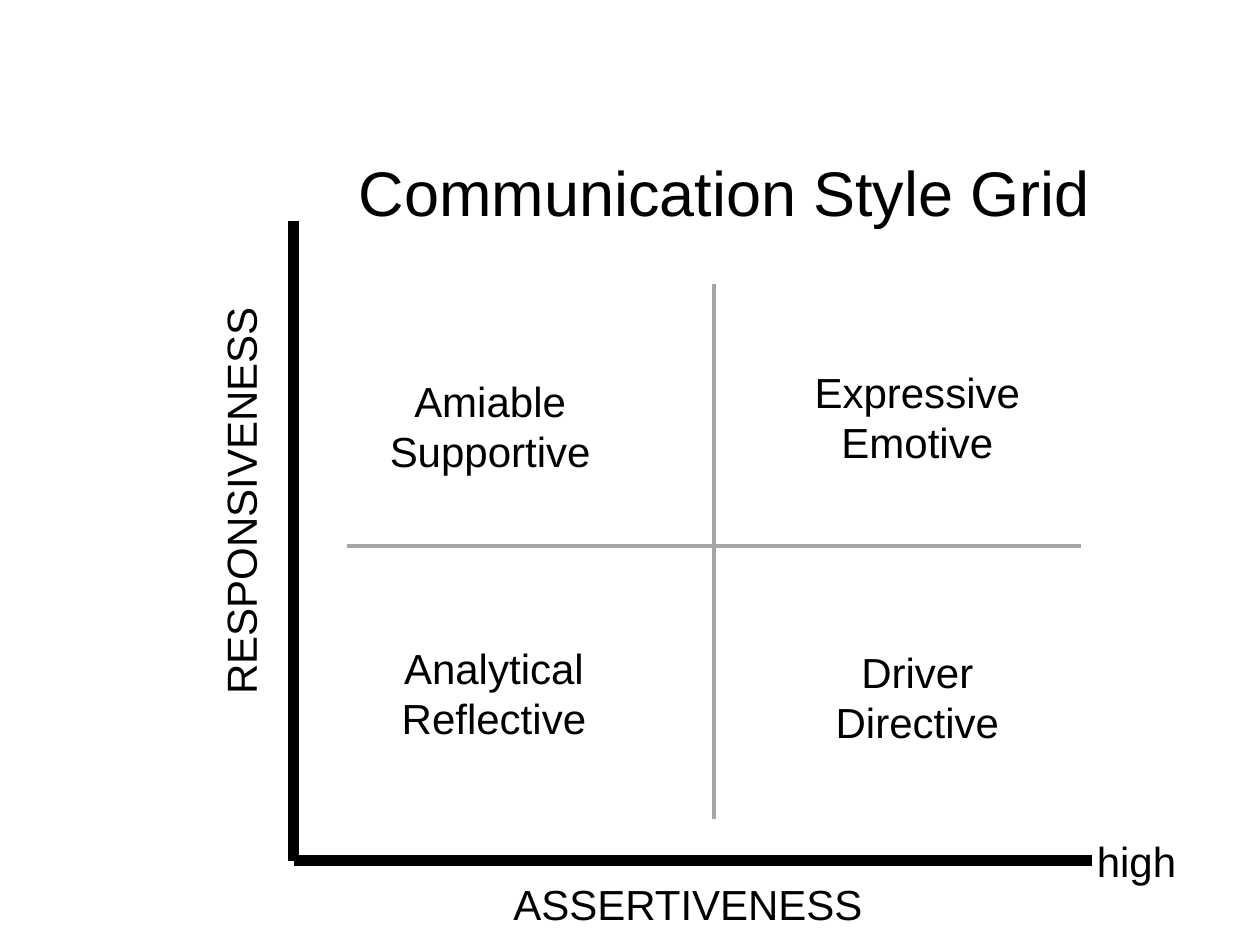
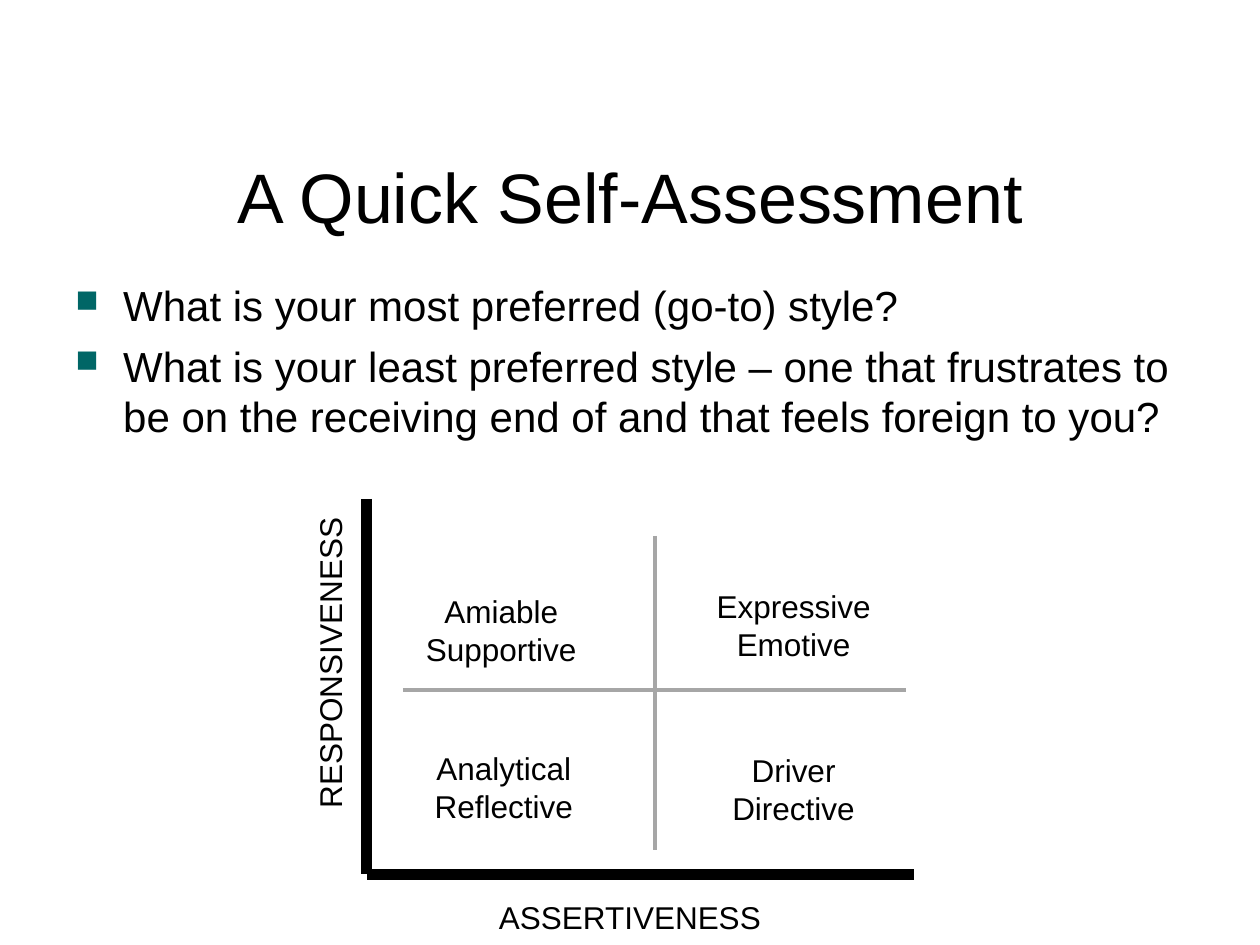
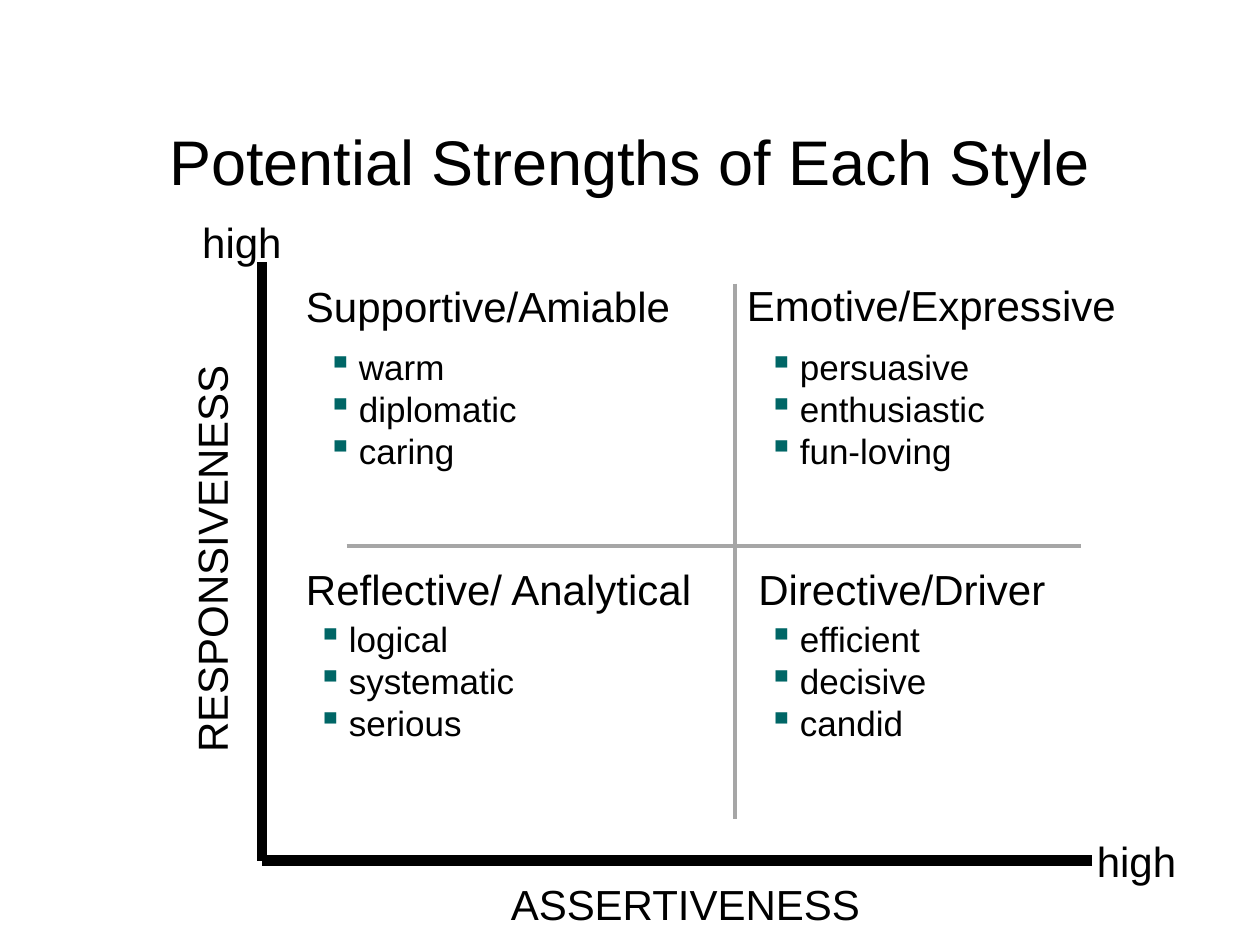
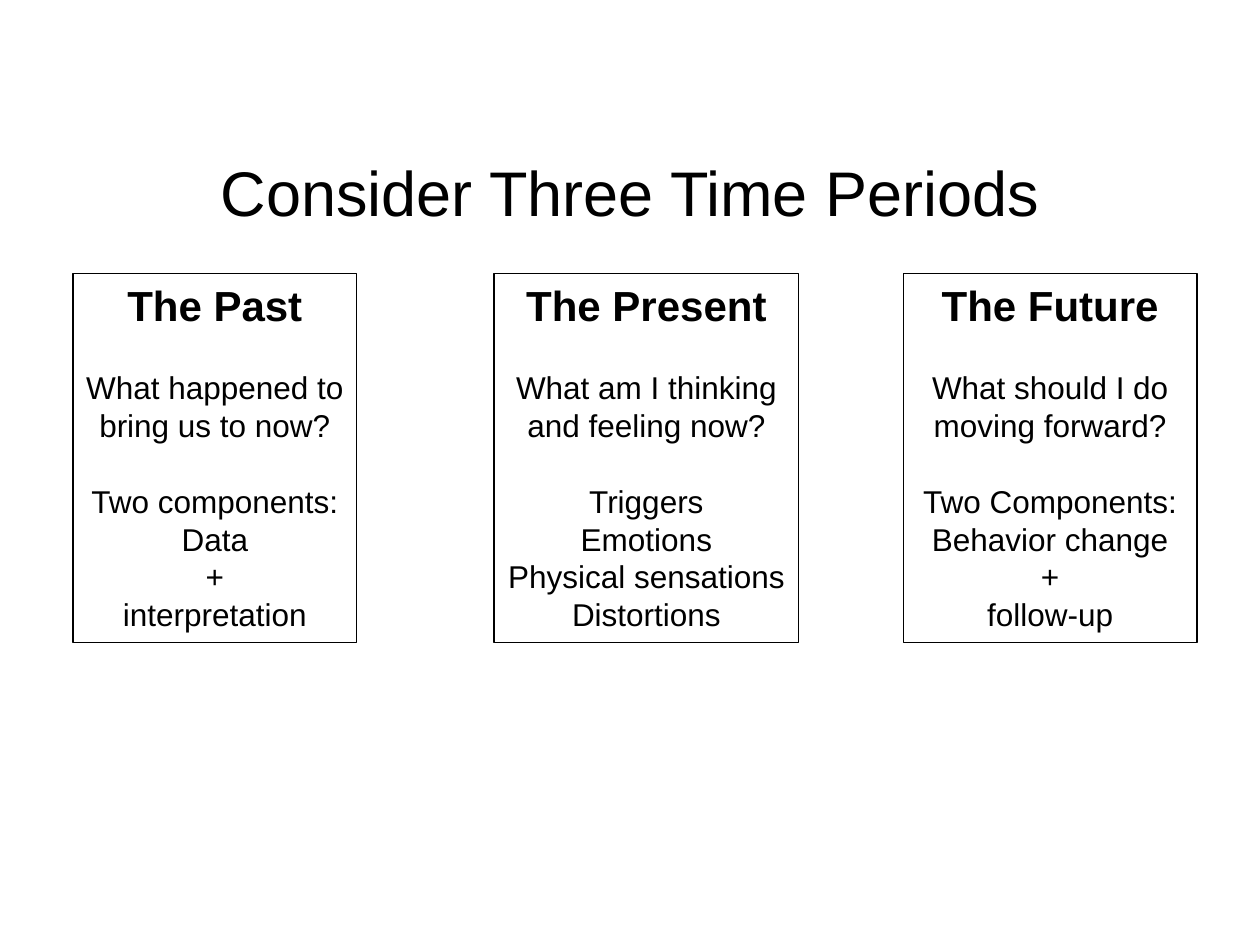
import pptx
import pptx.util
import pptx.dml.color
import pptx.enum.text
import pptx.enum.shapes
import pptx.oxml.ns
import lxml.etree

Inches = pptx.util.Inches
Pt = pptx.util.Pt
RGBColor = pptx.dml.color.RGBColor
Align = pptx.enum.text.PP_ALIGN
Anchor = pptx.enum.text.MSO_ANCHOR
Fit = pptx.enum.text.MSO_AUTO_SIZE
Shape = pptx.enum.shapes.MSO_SHAPE
Link = pptx.enum.shapes.MSO_CONNECTOR
qn = pptx.oxml.ns.qn

BLACK = RGBColor(0, 0, 0)
GRAY = RGBColor(0xA6, 0xA6, 0xA6)
TEAL = RGBColor(0, 0x66, 0x66)
FONT = "Arial"
TITLE = (0.5, 1.17, 9, 1.08)
FRAME = (6.34, 5.08)
ARMS = (0.42, 0.5, 6.25, 4.75)
MID = (3.34, 2.58)
STYLES = [
    (4.95, 3.33, 1.31, ["Driver", "Directive"]),
    (4.95, 1.11, 1.65, ["Expressive", "Emotive"]),
    (1.56, 1.18, 1.61, ["Amiable", "Supportive"]),
    (1.59, 3.3, 1.48, ["Analytical", "Reflective"]),
]
QUADS = [
    ((2.33, 2.18, 3.12, 0.5), (0.17, 0.51, 1.92, 1.51),
     "Supportive/Amiable", ["warm", "diplomatic", "caring"]),
    ((5.83, 2.17, 4.25, 0.5), (0.17, 0.52, 3.5, 1.11),
     "Emotive/Expressive", ["persuasive", "enthusiastic", "fun-loving"]),
    ((2.33, 4.42, 3.42, 0.5), (0.09, 0.43, 2, 1.51),
     "Reflective/ Analytical", ["logical", "systematic", "serious"]),
    ((5.92, 4.42, 3.67, 0.5), (0.08, 0.43, 3, 1.85),
     "Directive/Driver", ["efficient", "decisive", "candid"]),
]
TIMES = [
    (0.58, 2.25, "The Past", "What happened to bring us to now?",
     ["Two components:", "Data", "+", "interpretation"]),
    (3.92, 2.42, "The Present", "What am I thinking and feeling now?",
     ["Triggers", "Emotions", "Physical sensations", "Distortions"]),
    (7.17, 2.33, "The Future", "What should I do moving forward?",
     ["Two Components:\nBehavior change", "+", "follow-up"]),
]


def dress(item, look):
    for key, value in look.items():
        setattr(item, key, value)


def mark(para, char, indent, scale):
    props = para._p.get_or_add_pPr()
    props.set("marL", str(Inches(indent)))
    props.set("indent", str(-Inches(indent)))
    color = lxml.etree.SubElement(props, qn("a:buClr"))
    lxml.etree.SubElement(color, qn("a:srgbClr"), val=str(TEAL))
    lxml.etree.SubElement(props, qn("a:buSzPct"), val=str(scale * 1000))
    lxml.etree.SubElement(props, qn("a:buChar"), char=char)


def write(frame, lines, size, align=Align.LEFT, bullet=None, first={}, gaps={}):
    for i, line in enumerate(lines):
        para = frame.paragraphs[0] if i == 0 else frame.add_paragraph()
        para.text = line
        dress(para, {"alignment": align, "space_before": Pt(gaps.get(i, 0))})
        if bullet:
            mark(para, *bullet)
        look = {"name": FONT, "size": Pt(size), "bold": False}
        if i == 0:
            look.update(first)
        for run in para.runs:
            dress(run.font, look)
            run.font.color.rgb = BLACK


def place(slide, box, lines, size, wrap=True, **look):
    item = slide.shapes.add_textbox(*map(Inches, box))
    item.text_frame.word_wrap = wrap
    write(item.text_frame, lines, size, **look)
    return item


def label(slide, mid, top, width, lines, size):
    wide = width * size / 24 + 0.2
    high = 0.1 + len(lines) * size * 0.017
    box = (mid - wide / 2, top, wide, high)
    return place(slide, box, lines, size, wrap=False, align=Align.CENTER)


def rule(slide, x1, y1, x2, y2, color, width):
    line = slide.shapes.add_connector(Link.STRAIGHT, *map(Inches, (x1, y1, x2, y2)))
    line.line.color.rgb = color
    line.line.width = Pt(width)
    lxml.etree.SubElement(line._element.spPr, qn("a:effectLst"))


def start(deck, text, size=36, box=TITLE, inset=0.1):
    slide = deck.slides.add_slide(deck.slide_layouts[5])
    title = slide.shapes.title
    dress(title, dict(zip(("left", "top", "width", "height"), map(Inches, box))))
    dress(title.text_frame, {
        "word_wrap": True, "auto_size": Fit.NONE,
        "vertical_anchor": Anchor.TOP, "margin_left": Inches(inset)})
    write(title.text_frame, [text], size, align=Align.CENTER)
    return slide


def axes(slide, box, size, across, up):
    left, top, width, height = box
    base = top + height
    rule(slide, left, top, left, base, BLACK, 6)
    rule(slide, left + width, base, left, base, BLACK, 6)
    label(slide, left + across[0], base + across[1], 2.82, ["ASSERTIVENESS"], size)
    name = label(slide, left - up[0], top + up[1], 3.11, ["RESPONSIVENESS"], size)
    name.rotation = 270


def cross(slide, box, arms=ARMS, mid=MID, frame=FRAME):
    left, top, width, height = box
    sx, sy = width / frame[0], height / frame[1]
    x1, x2, x = [left + sx * v for v in (arms[0], arms[2], mid[0])]
    y1, y2, y = [top + sy * v for v in (arms[1], arms[3], mid[1])]
    rule(slide, x, y1, x, y2, GRAY, 2.25)
    rule(slide, x1, y, x2, y, GRAY, 2.25)


def styles(slide, box, size):
    left, top, width, height = box
    sx, sy = width / FRAME[0], height / FRAME[1]
    for x, y, wide, lines in STYLES:
        label(slide, left + sx * x, top + sy * y, wide, lines, size)


def high(slide, mid, top):
    label(slide, mid, top, 0.64, ["high"], 24)


def quad(slide, box, inner, head, words):
    place(slide, box, [head], 24)
    dx, dy, width, height = inner
    spot = (box[0] + dx, box[1] + dy, width, height)
    place(slide, spot, words, 20, bullet=("▪", 0.25, 100))


def card(slide, box, head, ask, parts):
    item = slide.shapes.add_shape(Shape.RECTANGLE, *map(Inches, box))
    item.shadow.inherit = False
    item.fill.background()
    item.line.color.rgb = BLACK
    item.line.width = Pt(0.75)
    dress(item.text_frame, {"word_wrap": True, "vertical_anchor": Anchor.TOP})
    write(item.text_frame, [head, ask] + parts, 18, align=Align.CENTER,
          first={"size": Pt(24), "bold": True}, gaps={1: 21.8, 2: 21.8})


def grid(deck):
    slide = start(deck, "Communication Style Grid", inset=1.6)
    box = (2.33, 1.75, 6.34, 5.08)
    axes(slide, box, 24, (3.13, 0.09), (0.42, 1.97))
    cross(slide, box)
    styles(slide, box, 24)
    high(slide, 9.02, 6.58)


def quiz(deck):
    slide = start(deck, "A Quick Self-Assessment", 40)
    place(slide, (0.5, 2.17, 9, 4.25), [
        "What is your most preferred (go-to) style?",
        "What is your least preferred style – one that frustrates to be on "
        "the receiving end of and that feels foreign to you?",
    ], 24, bullet=("■", 0.38, 75), gaps={1: 5.7})
    box = (2.91, 3.96, 4.34, 2.98)
    axes(slide, box, 18, (2.09, 0.14), (0.29, 1.1))
    cross(slide, box)
    styles(slide, box, 18)


def gains(deck):
    slide = start(deck, "Potential Strengths of Each Style", box=(0.5, 0.92, 9, 1.08))
    box = (2.08, 2.08, 6.59, 4.75)
    axes(slide, box, 24, (3.36, 0.09), (0.4, 2.1))
    cross(slide, box, (0.67, 0.17, 6.5, 4.42), (3.75, 2.25), box[2:])
    high(slide, 9.02, 6.58)
    high(slide, 1.92, 1.67)
    for part in QUADS:
        quad(slide, *part)


def times(deck):
    slide = start(deck, "Consider Three Time Periods")
    for left, width, head, ask, parts in TIMES:
        card(slide, (left, 2.17, width, 2.93), head, ask, parts)


def main():
    deck = pptx.Presentation()
    dress(deck, {"slide_width": Inches(10), "slide_height": Inches(7.5)})
    for build in (grid, quiz, gains, times):
        build(deck)
    deck.save("out.pptx")


if __name__ == "__main__":
    main()
